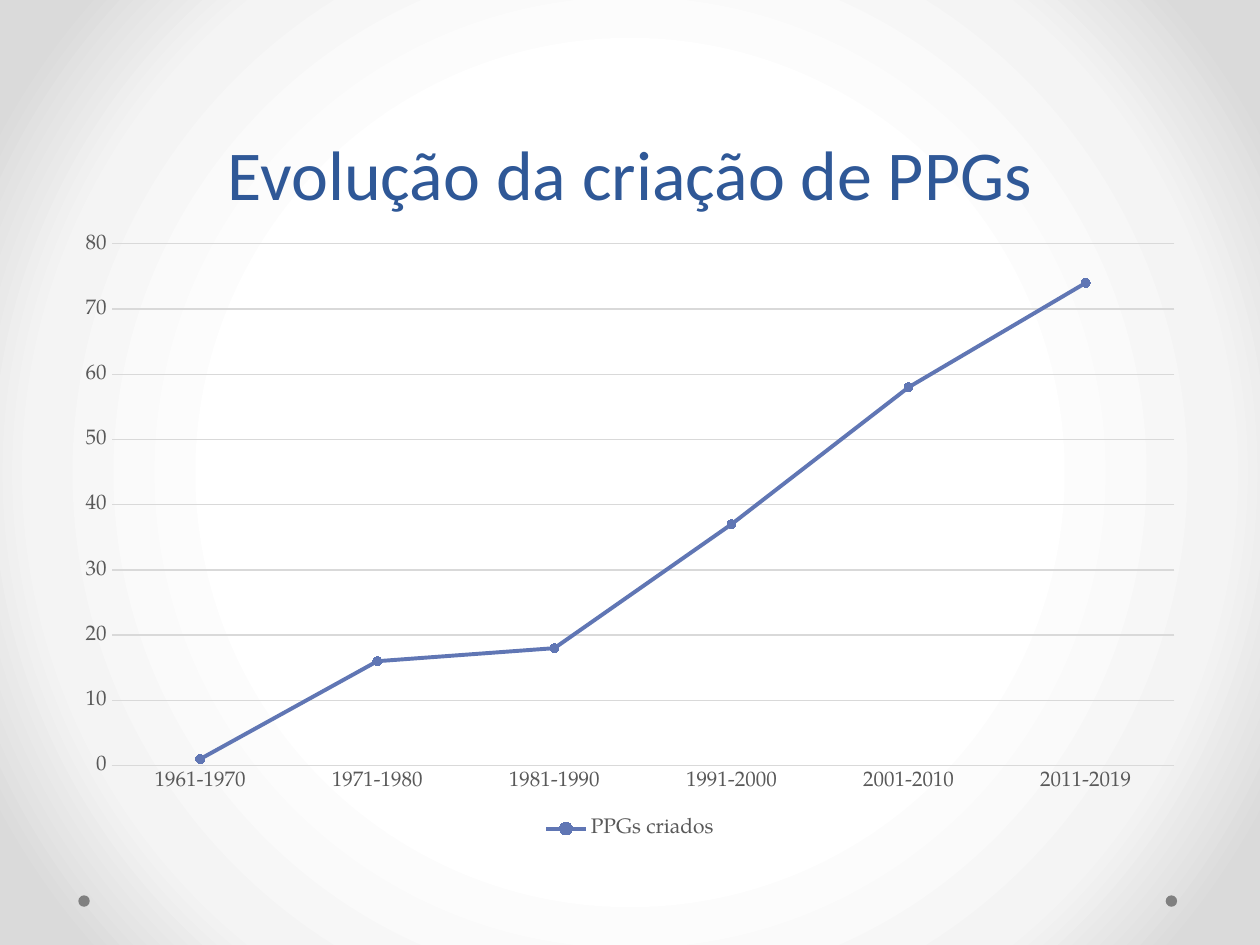
from lxml import etree
from pptx import Presentation
from pptx import util as u
from pptx.chart.data import CategoryChartData
from pptx.dml.color import RGBColor
from pptx.enum import chart as ch, shapes, text
from pptx.oxml import parse_xml
from pptx.oxml.ns import nsdecls

SERIF = "TeX Gyre Pagella"
BLUE, GREY, RULE = "6076B4", "595959", "D9D9D9"


def rgb(value):
    return RGBColor.from_string(value)


def paint(fill, color):
    fill.solid()
    fill.fore_color.rgb = rgb(color)


def style_line(line, color, width):
    paint(line.fill, color)
    line.width = u.Pt(width)


def style_font(font, name, size, color):
    font.name, font.size = name, u.Pt(size)
    font.color.rgb = rgb(color)


def set_radial_background(s, stops):
    """Fill the background from the centre outwards; stops are (percent, colour)."""
    fill = s.background.fill
    fill.solid()
    bg_pr = s._element.cSld.bg.bgPr
    gs = "".join(
        f'<a:gs pos="{pos * 1000}"><a:srgbClr val="{color}"/></a:gs>'
        for pos, color in stops)
    grad = parse_xml(
        f'<a:gradFill {nsdecls("a")} rotWithShape="1"><a:gsLst>{gs}</a:gsLst>'
        '<a:path path="circle"><a:fillToRect l="50000" t="50000" r="50000" b="50000"/>'
        '</a:path></a:gradFill>')
    bg_pr.replace(bg_pr[0], grad)


def add_dot(s, left, top, size):
    sp = s.shapes.add_shape(shapes.MSO_SHAPE.OVAL, left, top, size, size)
    sp.shadow.inherit = False
    paint(sp.fill, "808080")
    sp.line.fill.background()


def set_title(s, wording):
    sp = s.shapes.title
    sp.left, sp.top, sp.width, sp.height = u.Cm(1.27), u.Cm(0), u.Cm(22.86), u.Cm(4.45)
    tf = sp.text_frame
    tf.word_wrap = True
    tf.auto_size = text.MSO_AUTO_SIZE.NONE
    tf.vertical_anchor = text.MSO_ANCHOR.BOTTOM
    p = tf.paragraphs[0]
    p.alignment = text.PP_ALIGN.CENTER
    p.line_spacing = u.Pt(58)
    r = p.add_run()
    r.text = wording
    style_font(r.font, "Calibri", 40, "2F5897")


def style_axis(axis):
    axis.major_tick_mark = axis.minor_tick_mark = ch.XL_TICK_MARK.NONE
    style_font(axis.tick_labels.font, SERIF, 12, GREY)


def add_line_chart(s, name, points):
    data = CategoryChartData()
    data.categories = list(points)
    data.add_series(name, list(points.values()))
    chart = s.shapes.add_chart(
        ch.XL_CHART_TYPE.LINE_MARKERS,
        u.Cm(1.27), u.Cm(4.45), u.Cm(22.86), u.Cm(12.57), data).chart
    style_font(chart.font, SERIF, 10, "000000")
    chart.has_title = False
    chart.has_legend = True
    chart.legend.position = ch.XL_LEGEND_POSITION.BOTTOM
    chart.legend.include_in_layout = False
    style_font(chart.legend.font, SERIF, 12, GREY)

    cats, vals = chart.category_axis, chart.value_axis
    style_axis(cats)
    style_line(cats.format.line, RULE, 0.75)
    style_axis(vals)
    vals.format.line.fill.background()
    vals.minimum_scale, vals.maximum_scale, vals.major_unit = 0, 80, 10
    vals.has_major_gridlines = True
    style_line(vals.major_gridlines.format.line, RULE, 0.75)

    plot = chart.plots[0]
    plot.vary_by_categories = False
    series = plot.series[0]
    series.smooth = False
    style_line(series.format.line, BLUE, 2.25)
    series.marker.style = ch.XL_MARKER_STYLE.CIRCLE
    series.marker.size = 5
    paint(series.marker.format.fill, BLUE)
    style_line(series.marker.format.line, BLUE, 0.75)


def main():
    prs = Presentation()
    prs.slide_width, prs.slide_height = u.Cm(25.4), u.Cm(19.05)
    s = prs.slides.add_slide(prs.slide_layouts[5])
    set_radial_background(s, [(50, "FFFFFF"), (76, "F4F4F4"), (92, "DADADA")])
    for left in (23.5, 1.58):
        add_dot(s, u.Cm(left), u.Cm(18.05), u.Cm(0.23))
    set_title(s, "Evolução da criação de PPGs")
    add_line_chart(s, "PPGs criados", {
        "1961-1970": 1, "1971-1980": 16, "1981-1990": 18,
        "1991-2000": 37, "2001-2010": 58, "2011-2019": 74})
    prs.save("out.pptx")


if __name__ == "__main__":
    main()
